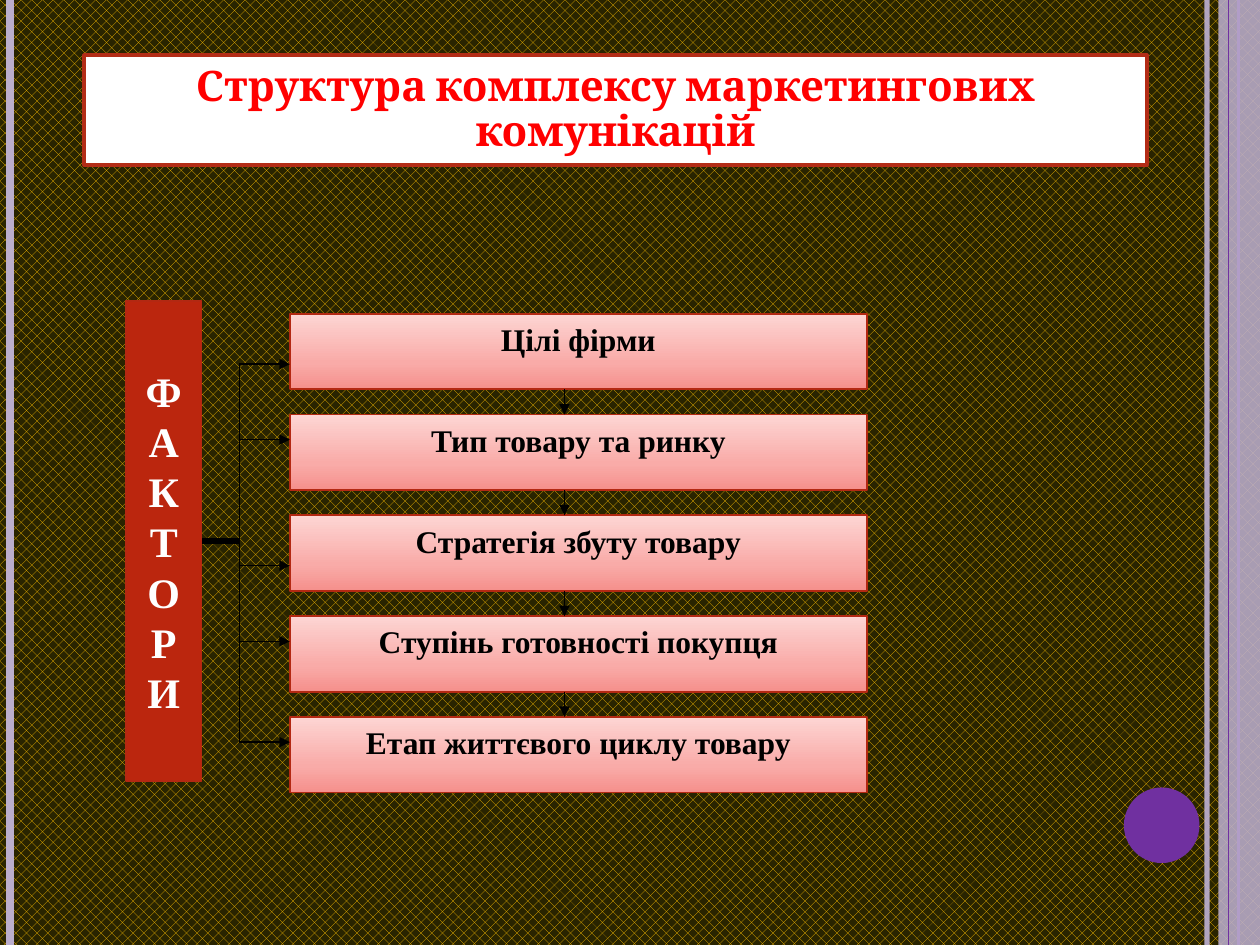
from copy import deepcopy

from lxml import etree
from pptx import Presentation
from pptx.dml.color import RGBColor
from pptx.enum.dml import MSO_PATTERN
from pptx.enum.shapes import MSO_CONNECTOR, MSO_SHAPE
from pptx.enum.text import MSO_ANCHOR, MSO_AUTO_SIZE, PP_ALIGN
from pptx.oxml.ns import qn
from pptx.util import Inches, Pt

RECT, OVAL = MSO_SHAPE.RECTANGLE, MSO_SHAPE.OVAL
STRAIGHT = MSO_CONNECTOR.STRAIGHT
PATTERN = MSO_PATTERN.from_xml("pct40")
CENTER = PP_ALIGN.CENTER
TOP, MIDDLE = MSO_ANCHOR.TOP, MSO_ANCHOR.MIDDLE
NO_FIT = MSO_AUTO_SIZE.NONE

SERIF = "Times New Roman"
FACTORS = ["Цілі фірми", "Тип товару та ринку", "Стратегія збуту товару",
           "Ступінь готовності покупця", "Етап життєвого циклу товару"]
ARROW_OFFSETS = [0.4, 0.2, 0.4, 0.2, 0.2]
GRADIENT = [(0, "F5908C"), (0.35, "F9ABA8"), (1, "FDD5D3")]


def rgb(value):
    """Return the colour for a hex string."""
    return RGBColor.from_string(value)


def set_alpha(fill_element, percent):
    """Make the first colour under an element partly transparent."""
    color = next(fill_element.iter(qn("a:srgbClr")))
    etree.SubElement(color, qn("a:alpha")).set("val", str(percent * 1000))


def add_line(s, x1, y1, x2, y2, color="000000", width=0.75, arrow=False):
    """Draw a straight line, with an arrowhead at its end if asked."""
    line = s.shapes.add_connector(STRAIGHT, Inches(x1), Inches(y1), Inches(x2), Inches(y2))
    line.line.color.rgb = rgb(color)
    line.line.width = Pt(width)
    if arrow:
        etree.SubElement(line.line._get_or_add_ln(), qn("a:tailEnd")).set("type", "triangle")
    etree.SubElement(line._element.spPr, qn("a:effectLst"))
    return line


def add_box(s, kind, x, y, w, h, fill, border=None):
    """Draw a filled shape without shadow."""
    sp = s.shapes.add_shape(kind, Inches(x), Inches(y), Inches(w), Inches(h))
    sp.shadow.inherit = False
    sp.fill.solid()
    sp.fill.fore_color.rgb = rgb(fill)
    if border:
        sp.line.color.rgb = rgb(border)
        sp.line.width = Pt(1)
    else:
        sp.line.fill.background()
    return sp


def write(sp, text, size, font, color, anchor, spacing=None):
    """Put bold centred text into a shape."""
    tf = sp.text_frame
    tf.text = text
    tf.word_wrap = True
    tf.auto_size = NO_FIT
    tf.vertical_anchor = anchor
    for p in tf.paragraphs:
        p.alignment = CENTER
        p.line_spacing = spacing
        for r in p.runs:
            r.font.size = Pt(size)
            r.font.name = font
            r.font.bold = True
            r.font.color.rgb = rgb(color)


def fill_gradient(sp):
    """Fill a shape with the pink gradient, darkest at the bottom."""
    sp.fill.gradient()
    sp.fill.gradient_angle = 90
    stops = sp._element.spPr.find(qn("a:gradFill")).find(qn("a:gsLst"))
    stops.append(deepcopy(stops[0]))
    for stop, (position, color) in zip(sp.fill.gradient_stops, GRADIENT):
        stop.position = position
        stop.color.rgb = rgb(color)


def build_frame(s, width, height):
    """Draw the patterned background, side stripes and corner circle."""
    fill = s.background.fill
    fill.patterned()
    fill.pattern = PATTERN
    fill.fore_color.rgb = rgb("FFC000")
    fill.back_color.rgb = rgb("292400")
    inner = add_line(s, 9.58, 0, 9.58, height, "BBAECD", 3)
    set_alpha(inner._element.spPr, 93)
    add_line(s, 0.08, 0, 0.08, height, "BBAECD", 4.5)
    add_line(s, 9.83, 0, 9.83, height, "7030A0", 1.5)
    band = add_box(s, RECT, 9.67, 0, width - 9.67, height, "BBAECD")
    set_alpha(band._element.spPr, 87)
    add_line(s, 9.75, 0, 9.75, height, "7030A0")
    add_box(s, OVAL, 8.92, 6.25, 0.6, 0.6, "7030A0")


def build_title(s, x, y, w, h):
    """Turn the title placeholder into a parallelogram banner."""
    sp = s.shapes.title
    sp.left, sp.top, sp.width, sp.height = Inches(x), Inches(y), Inches(w), Inches(h)
    geometry = etree.SubElement(sp._element.spPr, qn("a:prstGeom"))
    geometry.set("prst", "parallelogram")
    etree.SubElement(geometry, qn("a:avLst"))
    sp.fill.solid()
    sp.fill.fore_color.rgb = rgb("FFFFFF")
    sp.line.color.rgb = rgb("B32C16")
    sp.line.width = Pt(2.25)
    write(sp, "Структура комплексу маркетингових комунікацій",
          24, "Cambria", "FF0000", MIDDLE, 0.9)


def build_factors(s, x, y, w, h):
    """Draw the factor column, its bracket and the chain of boxes."""
    column = add_box(s, RECT, x, y, 0.6, h, "BB260E", "B32812")
    write(column, "\n".join("ФАКТОРИ"), 24, SERIF, "FFFFFF", MIDDLE, Pt(28.75))
    trunk, left, top = x + 0.9, x + 1.3, y + 0.1
    box_h, pitch = 0.6, 0.8
    chain_x = left + 2.18
    tops = [top + i * pitch for i in range(len(FACTORS))]
    for text, box_y in zip(FACTORS, tops):
        box = add_box(s, RECT, left, box_y, x + w - left, box_h, "F9ABA8", "B32812")
        fill_gradient(box)
        write(box, text, 18, SERIF, "000000", TOP)
    arrows = [box_y + offset for box_y, offset in zip(tops, ARROW_OFFSETS)]
    add_line(s, trunk, arrows[0], trunk, arrows[-1])
    for arrow_y in arrows:
        add_line(s, trunk, arrow_y, left, arrow_y, arrow=True)
    for box_y, next_y in zip(tops, tops[1:]):
        add_line(s, chain_x, box_y + box_h, chain_x, next_y, arrow=True)
    stem_y = y + h / 2
    stem = add_line(s, trunk, stem_y, x + 0.6, stem_y, width=3.25)
    stem.end_connect(column, 3)


def main():
    """Build the slide and save it."""
    prs = Presentation()
    prs.slide_width, prs.slide_height = Inches(10), Inches(7.5)
    s = prs.slides.add_slide(prs.slide_layouts[5])
    build_frame(s, 10, 7.5)
    build_title(s, 0.67, 0.44, 8.43, 0.87)
    build_factors(s, 1, 2.39, 5.88, 3.81)
    prs.save("out.pptx")


if __name__ == "__main__":
    main()
